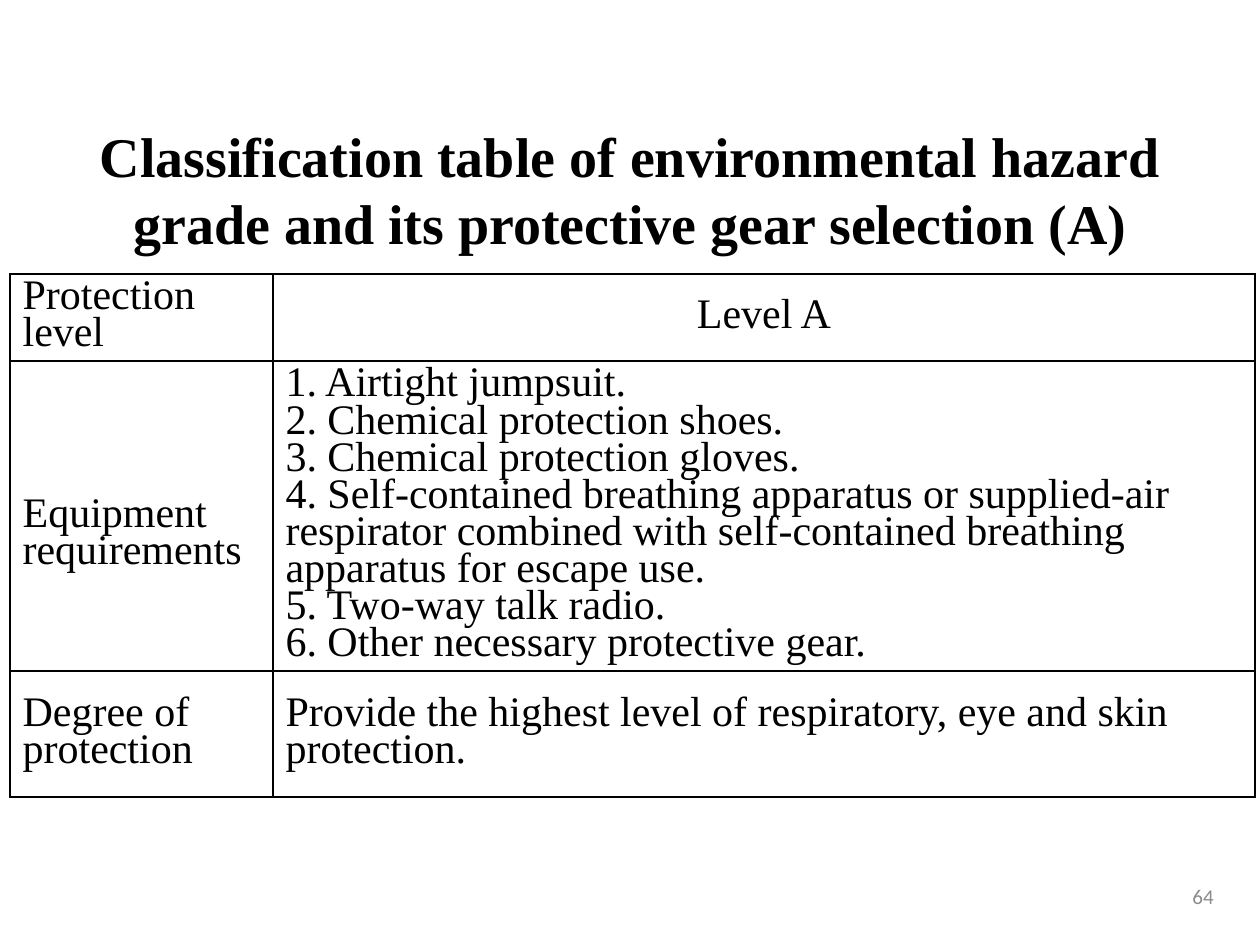
from dataclasses import dataclass

from lxml import etree
from pptx import Presentation
from pptx.dml.color import RGBColor
from pptx.enum.text import MSO_ANCHOR, MSO_AUTO_SIZE, PP_ALIGN
from pptx.oxml.ns import qn
from pptx.util import Pt

EMU_PER_PX = 914400 / 126
LEFT, CENTER, RIGHT = PP_ALIGN.LEFT, PP_ALIGN.CENTER, PP_ALIGN.RIGHT
MIDDLE = MSO_ANCHOR.MIDDLE
NO_AUTOFIT = MSO_AUTO_SIZE.NONE
SERIF, SANS = "Times New Roman", "Calibri"
BLACK, GRAY = "000000", "8C8C8C"

COLUMN_WIDTHS = (263, 982)
ROW_HEIGHTS = (87, 310, 126)


@dataclass(frozen=True)
class CellText:
    lines: tuple[str, ...]
    alignment: PP_ALIGN = LEFT
    numbered: bool = False
    margin_top: int = 6


ROWS = (
    (CellText(("Protection level",)), CellText(("Level A",), CENTER)),
    (
        CellText(("Equipment requirements",), margin_top=44),
        CellText(
            (
                " Airtight jumpsuit.",
                " Chemical protection shoes.",
                " Chemical protection gloves.",
                " Self-contained breathing apparatus or supplied-air respirator "
                "combined with self-contained breathing apparatus for escape use.",
                " Two-way talk radio.",
                " Other necessary protective gear.",
            ),
            numbered=True,
        ),
    ),
    (
        CellText(("Degree of protection",)),
        CellText(("Provide the highest level of respiratory, eye and skin protection.",)),
    ),
)


def px(length: int) -> int:
    return round(length * EMU_PER_PX)


def color(value: str) -> RGBColor:
    return RGBColor.from_string(value)


def format_paragraph(paragraph, alignment, font_name, size, font_color, bold=False) -> None:
    paragraph.alignment = alignment
    font = paragraph.font
    font.name, font.size, font.bold = font_name, Pt(size), bold
    font.color.rgb = color(font_color)


def number_paragraph(paragraph) -> None:
    properties = paragraph._p.get_or_add_pPr()
    properties.set("marL", "0")
    properties.set("indent", "0")
    etree.SubElement(properties, qn("a:buFont"), typeface="+mj-lt")
    etree.SubElement(properties, qn("a:buAutoNum"), type="arabicPeriod")


def add_borders(cell) -> None:
    properties = cell._tc.get_or_add_tcPr()
    for index, side in enumerate(("lnL", "lnR", "lnT", "lnB")):
        line = etree.Element(qn(f"a:{side}"), w=str(Pt(1)))
        fill = etree.SubElement(line, qn("a:solidFill"))
        etree.SubElement(fill, qn("a:srgbClr"), val=BLACK)
        properties.insert(index, line)


def fill_cell(cell, content: CellText) -> None:
    cell.fill.background()
    add_borders(cell)
    cell.vertical_anchor = MIDDLE
    cell.margin_top = px(content.margin_top)
    frame = cell.text_frame
    frame.text = "\n".join(content.lines)
    for paragraph in frame.paragraphs:
        if content.numbered:
            number_paragraph(paragraph)
        paragraph.line_spacing = 0.8
        format_paragraph(paragraph, content.alignment, SERIF, 24, BLACK)


def add_title(slide) -> None:
    title = slide.shapes.title
    title.left, title.top, title.width, title.height = map(px, (40, 144, 1181, 89))
    frame = title.text_frame
    frame.text = "Classification table of environmental hazard grade and its protective gear selection (A)"
    frame.auto_size = NO_AUTOFIT
    frame.vertical_anchor = MIDDLE
    format_paragraph(frame.paragraphs[0], CENTER, SERIF, 32, BLACK, bold=True)


def add_protection_table(slide) -> None:
    size = (sum(COLUMN_WIDTHS), sum(ROW_HEIGHTS))
    frame = slide.shapes.add_table(len(ROWS), len(COLUMN_WIDTHS), px(10), px(274), *map(px, size))
    table = frame.table
    table.first_row = table.horz_banding = False
    for column, width in zip(table.columns, COLUMN_WIDTHS):
        column.width = px(width)
    for row, height, contents in zip(table.rows, ROW_HEIGHTS, ROWS):
        row.height = px(height)
        for cell, content in zip(row.cells, contents):
            fill_cell(cell, content)


def add_page_number(slide) -> None:
    frame = slide.shapes.add_textbox(*map(px, (932, 871, 294, 50))).text_frame
    frame.word_wrap = True
    frame.vertical_anchor = MIDDLE
    frame.text = "64"
    format_paragraph(frame.paragraphs[0], RIGHT, SANS, 12, GRAY)


def main() -> None:
    presentation = Presentation()
    presentation.slide_width, presentation.slide_height = px(1260), px(945)
    slide = presentation.slides.add_slide(presentation.slide_layouts[5])
    add_title(slide)
    add_protection_table(slide)
    add_page_number(slide)
    presentation.save("out.pptx")


if __name__ == "__main__":
    main()
